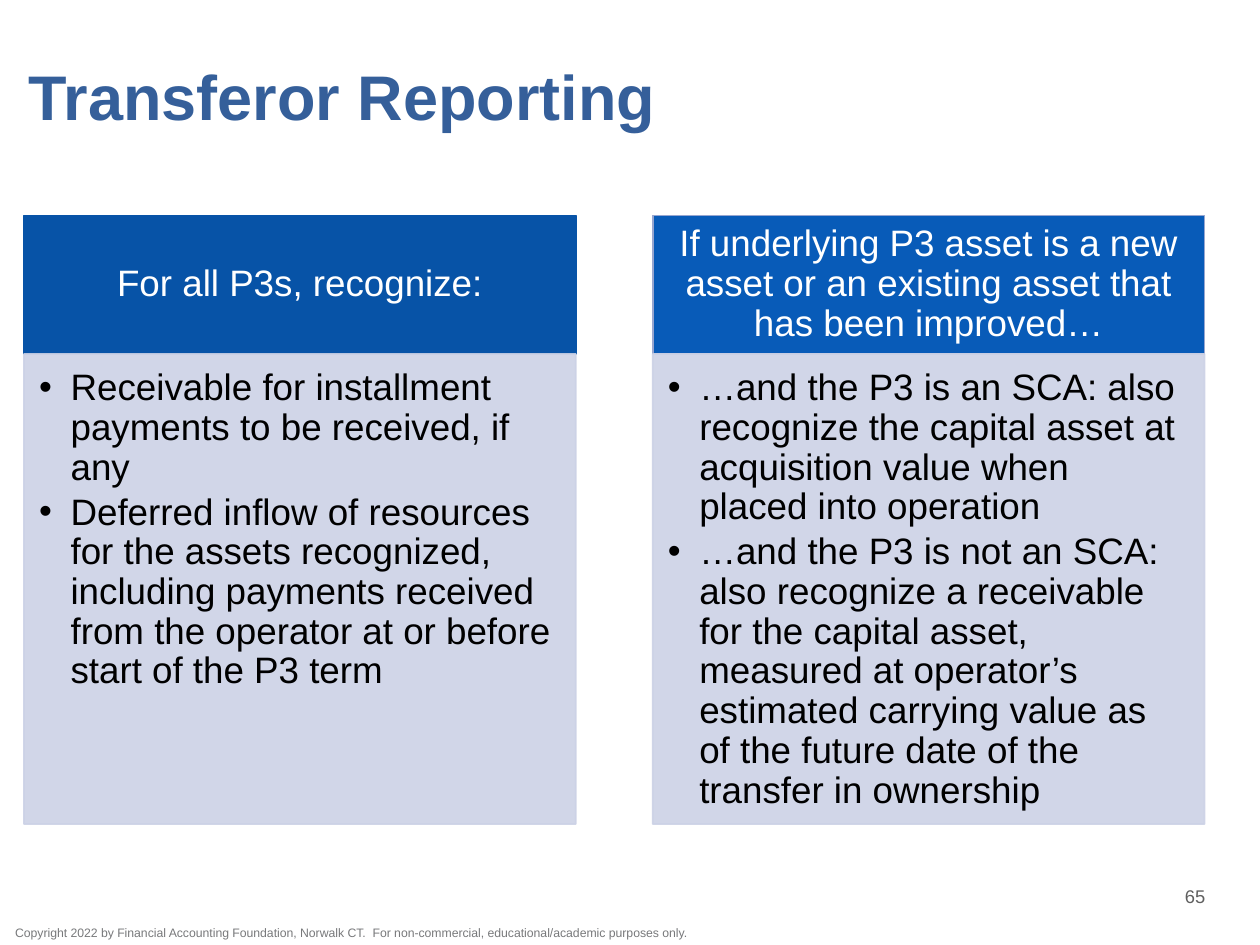
from lxml.etree import SubElement
from pptx import Presentation
from pptx.dml.color import RGBColor
from pptx.enum.text import MSO_ANCHOR, MSO_AUTO_SIZE, PP_ALIGN
from pptx.oxml.ns import qn
from pptx.util import Inches, Pt

COLORS = {
    "title": "355F9A",
    "left": "0753A7",
    "right": "085BB8",
    "right_line": "97A6D0",
    "panel": "CCD2E6",
    "white": "FFFFFF",
    "black": "000000",
    "number": "5F5F5F",
    "copyright": "78797B",
}
HEADER_HEIGHT = 1.1
COLUMN_TOP, COLUMN_WIDTH, COLUMN_HEIGHT = 1.71, 4.38, 4.83
COLUMNS = [
    {
        "x": 0.19, "fill": "left", "line": "left",
        "header": "For all P3s, recognize:",
        "items": [
            "Receivable for installment payments to be received, if any",
            "Deferred inflow of resources for the assets recognized, including "
            "payments received from the operator at or before start of the P3 term",
        ],
    },
    {
        "x": 5.18, "fill": "right", "line": "right_line",
        "header": "If underlying P3 asset is a new asset or an existing asset "
                  "that has been improved…",
        "items": [
            "…and the P3 is an SCA: also recognize the capital asset at "
            "acquisition value when placed into operation",
            "…and the P3 is not an SCA: also recognize a receivable for the "
            "capital asset, measured at operator’s estimated carrying value as "
            "of the future date of the transfer in ownership",
        ],
    },
]


def rgb(name):
    return RGBColor.from_string(COLORS[name])


def place(sp, box):
    for name, value in zip(("left", "top", "width", "height"), box):
        setattr(sp, name, Inches(value))


def write(sp, lines, size, color, margins, bold=False, indent=None,
          anchor=MSO_ANCHOR.TOP, **paragraph_format):
    tf = sp.text_frame
    frame = {"word_wrap": True, "auto_size": MSO_AUTO_SIZE.NONE,
             "vertical_anchor": anchor}
    sides = ("margin_left", "margin_top", "margin_right", "margin_bottom")
    frame.update(zip(sides, map(Inches, margins)))
    for name, value in frame.items():
        setattr(tf, name, value)
    for i, line in enumerate(lines):
        p = tf.paragraphs[0] if i == 0 else tf.add_paragraph()
        if indent:
            pPr = p._p.get_or_add_pPr()
            pPr.set("marL", str(Inches(indent)))
            pPr.set("indent", str(-Inches(indent)))
            SubElement(pPr, qn("a:buFont"), typeface="Arial")
            SubElement(pPr, qn("a:buChar"), char="•")
        for name, value in {"space_before": Pt(0), **paragraph_format}.items():
            setattr(p, name, value)
        r = p.add_run()
        r.text = line
        for name, value in {"name": "Arial", "size": Pt(size), "bold": bold}.items():
            setattr(r.font, name, value)
        r.font.color.rgb = rgb(color)


def paint(sp, fill, line, opacity=None):
    sp.fill.solid()
    sp.fill.fore_color.rgb = rgb(fill)
    sp.line.color.rgb = rgb(line)
    sp.line.width = Pt(1)
    if opacity:
        for color in sp._element.spPr.iter(qn("a:srgbClr")):
            SubElement(color, qn("a:alpha"), val=str(opacity * 1000))


def add_title(s, box):
    sp = s.shapes.title
    place(sp, box)
    write(sp, ["Transferor Reporting"], 36, "title", (0.1, 0, 0, 0), bold=True,
          anchor=MSO_ANCHOR.MIDDLE, alignment=PP_ALIGN.LEFT, line_spacing=Pt(37))


def add_column(header, body, box, column):
    x, y, w, h = box
    place(header, (x, y, w, HEADER_HEIGHT))
    paint(header, column["fill"], column["line"])
    write(header, [column["header"]], 21, "white", (0.16, 0.09, 0.16, 0.09),
          anchor=MSO_ANCHOR.MIDDLE, alignment=PP_ALIGN.CENTER, line_spacing=0.9)
    place(body, (x, y + HEADER_HEIGHT, w, h - HEADER_HEIGHT))
    paint(body, "panel", "panel", opacity=90)
    write(body, column["items"], 21, "black", (0.12, 0.12, 0.16, 0.18),
          indent=0.25, alignment=PP_ALIGN.LEFT, line_spacing=0.9, space_after=Pt(3))


def add_note(s, box, text, size, color, margins, **text_format):
    sp = s.shapes.add_textbox(*map(Inches, box))
    write(sp, [text], size, color, margins, **text_format)


def main():
    prs = Presentation()
    prs.slide_width, prs.slide_height = Inches(10), Inches(7.5)
    s = prs.slides.add_slide(prs.slide_layouts.get_by_name("Comparison"))
    add_title(s, (0.13, 0.31, 9.49, 0.98))
    holders = list(s.placeholders)[1:]
    for header, body, column in zip(holders[::2], holders[1::2], COLUMNS):
        box = (column["x"], COLUMN_TOP, COLUMN_WIDTH, COLUMN_HEIGHT)
        add_column(header, body, box, column)
    add_note(s, (8.97, 6.95, 1.03, 0.33), "65", 10.5, "number",
             (0.1, 0.05, 0.1, 0.05), anchor=MSO_ANCHOR.MIDDLE,
             alignment=PP_ALIGN.CENTER)
    add_note(s, (0.12, 7.34, 5.43, 0.14),
             "Copyright 2022 by Financial Accounting Foundation, Norwalk CT.  "
             "For non-commercial, educational/academic purposes only.",
             7, "copyright", (0, 0, 0, 0))
    prs.save("out.pptx")


if __name__ == "__main__":
    main()
